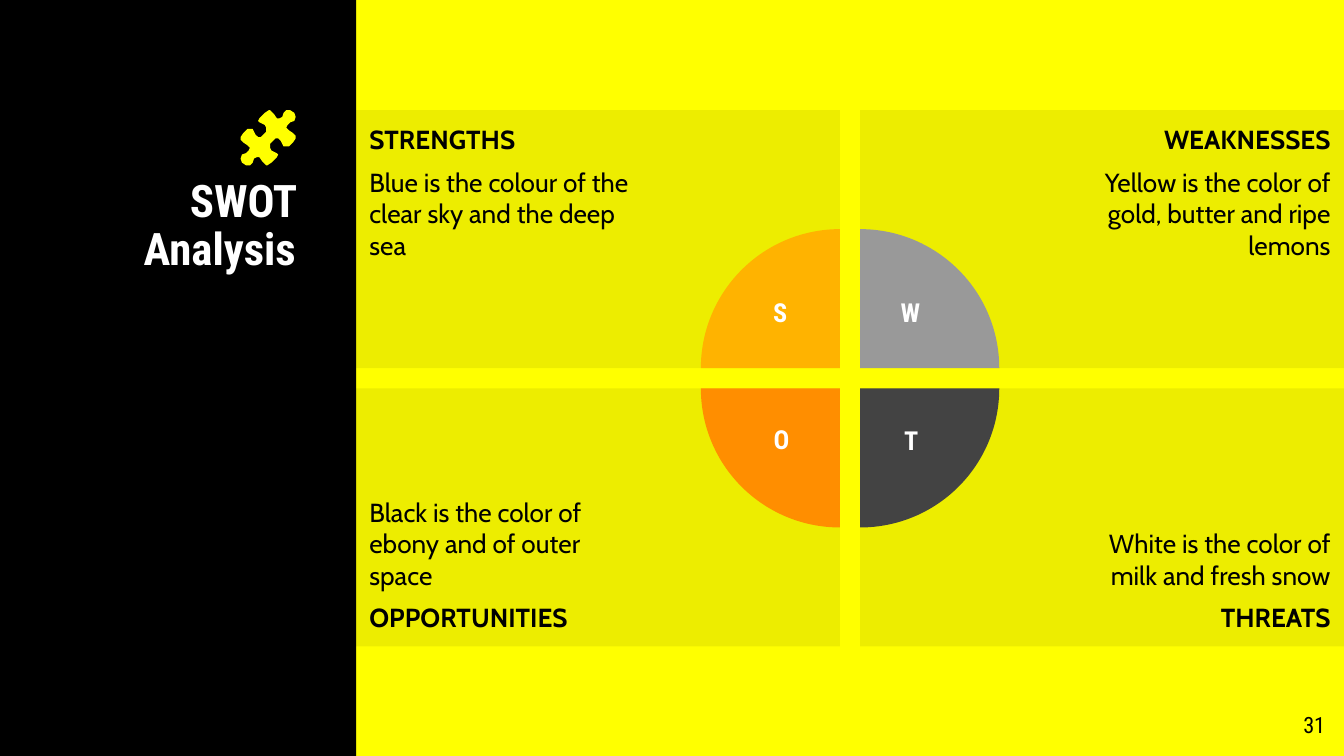
from lxml.etree import SubElement
from pptx import Presentation
from pptx.dml.color import RGBColor
from pptx.enum.shapes import MSO_SHAPE as Kind
from pptx.enum.text import MSO_ANCHOR as Anchor, PP_ALIGN as Align
from pptx.oxml.ns import qn
from pptx.util import Inches, Pt

WIDE, HIGH = 10, 10 * 9 / 16
SIDE, TOP, GAP = 2.65, 0.82, 0.15
CELL_W, CELL_H = (WIDE - SIDE - GAP) / 2, 1.92
PIE = 2.07
HEAD, BODY = "Roboto Condensed", "Cabin"
BLACK, WHITE, YELLOW = "000000", "FFFFFF", "FFFF00"

PARTS = [
    ("STRENGTHS", "Blue is the colour of the clear sky and the deep sea",
     "FFB300", 0, (5.69, 2.13, 0.23, 0.38)),
    ("WEAKNESSES", "Yellow is the color of gold, butter and ripe lemons",
     "999999", 90, (6.56, 2.14, 0.43, 0.37)),
    ("OPPORTUNITIES", "Black is the color of ebony and of outer space",
     "FF8E00", 270, (5.66, 3.08, 0.31, 0.38)),
    ("THREATS", "White is the color of milk and fresh snow",
     "434343", 180, (6.66, 3.09, 0.24, 0.37)),
]

ICON_X, ICON = 1.79, 41
HALF = [
    (21, 0), (18, 2), (14, 6), (13, 8), (14, 9), (16, 10), (18, 11),
    (19, 13), (19, 16), (17, 18), (15, 20), (13, 20), (11, 18), (10, 16),
    (9, 14), (7, 14), (5, 14), (2, 17), (0, 20), (0, 22), (2, 24), (5, 26),
    (7, 28), (6, 30), (4, 32), (1, 33), (0, 36), (1, 39), (4, 41), (7, 41),
    (9, 39), (10, 36), (12, 35), (14, 35), (16, 38), (19, 41),
]


def color(code):
    return RGBColor.from_string(code)


def paint(shape, code, alpha=None):
    shape.shadow.inherit = False
    shape.fill.solid()
    shape.fill.fore_color.rgb = color(code)
    shape.line.fill.background()
    if alpha:
        tone = shape.fill._xPr.find(qn("a:solidFill"))[0]
        SubElement(tone, qn("a:alpha")).set("val", str(alpha * 1000))
    return shape


def add(kind, box, code, alpha=None):
    shape = slide.shapes.add_shape(kind, *map(Inches, box))
    return paint(shape, code, alpha)


def write(shape, lines, font, size, code, align, anchor=Anchor.TOP,
          pads=(0.1, 0.1), wrap=True):
    frame = shape.text_frame
    frame.word_wrap = wrap
    frame.vertical_anchor = anchor
    frame.margin_left, frame.margin_right = map(Inches, pads)
    frame.margin_top = frame.margin_bottom = Inches(0.1)
    frame.text = "\n".join(text for text, bold in lines)
    for para, (text, bold) in zip(frame.paragraphs, lines):
        para.alignment = align
        for run in para.runs:
            run.font.name, run.font.size = font, Pt(size)
            run.font.bold = bold
            run.font.color.rgb = color(code)
    for para in frame.paragraphs[1:]:
        para.space_before = para.space_after = Pt(6)
    return frame


def label(box, text, size, code, align, bold=True, **more):
    shape = slide.shapes.add_textbox(*map(Inches, box))
    return write(shape, [(text, bold)], HEAD, size, code, align, **more)


deck = Presentation()
deck.slide_width, deck.slide_height = Inches(WIDE), Inches(HIGH)
slide = deck.slides.add_slide(deck.slide_layouts[6])
slide.background.fill.solid()
slide.background.fill.fore_color.rgb = color(YELLOW)

add(Kind.RECTANGLE, (0, 0, SIDE, HIGH), BLACK)
title = label((0.44, 1.23, 1.86, 1.62), "SWOT Analysis", 24, WHITE, Align.RIGHT)
title.paragraphs[0].line_spacing = 0.9
label((9.36, 5.19, 0.6, 0.43), "31", 12, BLACK, Align.RIGHT, bold=False)

for i, (name, note, tint, turn, spot) in enumerate(PARTS):
    row, col = divmod(i, 2)
    box = (SIDE + col * (CELL_W + GAP), TOP + row * (CELL_H + GAP), CELL_W, CELL_H)
    lines = [(name, True), (note, False)]
    write(add(Kind.RECTANGLE, box, BLACK, 7),
          lines[::-1] if row else lines, BODY, 14, BLACK,
          Align.RIGHT if col else Align.LEFT,
          Anchor.BOTTOM if row else Anchor.TOP,
          (1.5, 0.1) if col else (0.1, 1.5))

mid_x, mid_y = SIDE + CELL_W, TOP + CELL_H
for i, (name, note, tint, turn, spot) in enumerate(PARTS):
    row, col = divmod(i, 2)
    pie = add(Kind.PIE, (mid_x + col * GAP - PIE / 2,
                         mid_y + row * GAP - PIE / 2, PIE, PIE), tint)
    pie.adjustments[0], pie.adjustments[1] = 108, 162
    pie.rotation = turn

for name, note, tint, turn, spot in PARTS:
    label(spot, name[0], 14, WHITE, Align.CENTER, anchor=Anchor.MIDDLE,
          pads=(0, 0), wrap=False)

dots = HALF + [(ICON - x, ICON - y) for x, y in HALF]
pen = slide.shapes.build_freeform(*dots[0], scale=Inches(0.01))
pen.add_line_segments(dots[1:], close=True)
paint(pen.convert_to_shape(Inches(ICON_X), Inches(TOP)), YELLOW)

deck.save("out.pptx")
